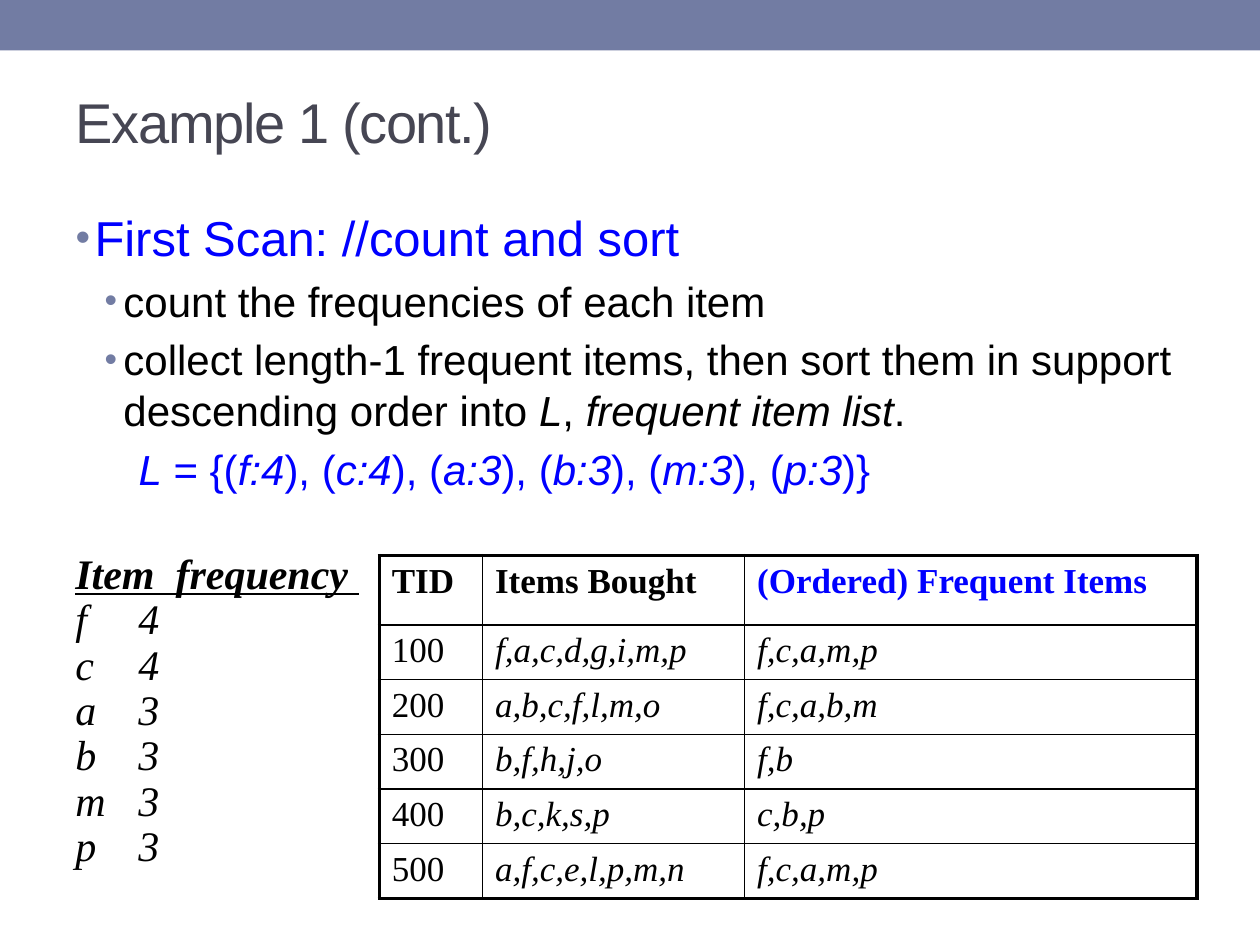
from dataclasses import dataclass

from lxml.etree import SubElement
from pptx import Presentation
from pptx.dml.color import RGBColor
from pptx.enum.shapes import MSO_SHAPE
from pptx.enum.text import MSO_ANCHOR, MSO_AUTO_SIZE, PP_ALIGN
from pptx.oxml.ns import qn
from pptx.util import Inches, Pt

HUES = {
    "bar": "727CA3",
    "title": "464653",
    "blue": "0000FF",
    "black": "000000",
}
SANS, SERIF = "Arial", "Times New Roman"


@dataclass
class Point:
    text: str
    size: int
    hue: str
    left: float
    level: int = 1
    mark: bool = True


POINTS = [
    Point("First Scan: //count and sort", 28, "blue", 0.15, level=0),
    Point("count the frequencies of each item", 24, "black", 0.38),
    Point("collect length-1 frequent items, then sort them in support "
          "descending order into *L*, *frequent item list*.", 24, "black", 0.38),
    Point("*L* = {(*f:4*), (*c:4*), (*a:3*), (*b:3*), (*m:3*), (*p:3*)}",
          24, "blue", 0.5, mark=False),
]
COUNTS = {"f": 4, "c": 4, "a": 3, "b": 3, "m": 3, "p": 3}
ROWS = [
    ("TID", "Items Bought", "(Ordered) Frequent Items"),
    ("100", "f,a,c,d,g,i,m,p", "f,c,a,m,p"),
    ("200", "a,b,c,f,l,m,o", "f,c,a,b,m"),
    ("300", "b,f,h,j,o", "f,b"),
    ("400", "b,c,k,s,p", "c,b,p"),
    ("500", "a,f,c,e,l,p,m,n", "f,c,a,m,p"),
]
WIDTHS = [0.82, 2.08, 3.59]


def color(hue: str) -> RGBColor:
    return RGBColor.from_string(HUES[hue])


def style(run, face: str, size: int, hue: str, bold=False, italic=False) -> None:
    font = run.font
    font.name, font.size = face, Pt(size)
    font.bold, font.italic = bold, italic
    font.color.rgb = color(hue)


def place(shape, left: float, top: float, width: float, height: float) -> None:
    shape.left, shape.top = Inches(left), Inches(top)
    shape.width, shape.height = Inches(width), Inches(height)


def add_bar(slide) -> None:
    bar = slide.shapes.add_shape(MSO_SHAPE.RECTANGLE, 0, 0, Inches(10), Inches(0.4))
    bar.shadow.inherit = False
    bar.fill.solid()
    bar.fill.fore_color.rgb = color("bar")
    bar.line.fill.background()


def add_title(slide) -> None:
    title = slide.shapes.title
    place(title, 0.5, 0.42, 9, 1.08)
    frame = title.text_frame
    frame.text = "Example 1 (cont.)"
    frame.vertical_anchor = MSO_ANCHOR.MIDDLE
    frame.auto_size = MSO_AUTO_SIZE.NONE
    para = frame.paragraphs[0]
    para.alignment = PP_ALIGN.LEFT
    run = para.runs[0]
    style(run, SANS, 32, "title")
    run.font._element.set("spc", "-80")


def set_mark(para, point: Point) -> None:
    props = para._p.get_or_add_pPr()
    props.set("marL", str(Inches(point.left)))
    props.set("indent", str(Inches(-0.15 if point.mark else 0)))
    if point.mark:
        tint = SubElement(props, qn("a:buClr"))
        SubElement(tint, qn("a:srgbClr"), val=HUES["bar"])
        SubElement(props, qn("a:buSzPct"), val="85000")
        SubElement(props, qn("a:buFont"), typeface=SANS)
        SubElement(props, qn("a:buChar"), char="•")
    else:
        SubElement(props, qn("a:buNone"))


def add_points(slide) -> None:
    body = slide.placeholders[1]
    place(body, 0.5, 1.6, 9, 5.48)
    frame = body.text_frame
    frame.auto_size = MSO_AUTO_SIZE.NONE
    for i, point in enumerate(POINTS):
        para = frame.add_paragraph() if i else frame.paragraphs[0]
        para.level = point.level
        para.space_before = Pt(point.size * 0.2)
        set_mark(para, point)
        for j, part in enumerate(point.text.split("*")):
            if part:
                run = para.add_run()
                run.text = part
                style(run, SANS, point.size, point.hue, italic=j % 2 == 1)


def add_counts(slide) -> None:
    box = slide.shapes.add_textbox(Inches(0.5), Inches(4.34), Inches(2.5), Inches(2.65))
    frame = box.text_frame
    frame.word_wrap = True
    lines = ["Item  frequency "] + [f"{item}\t{count}" for item, count in COUNTS.items()]
    frame.text = "\n".join(lines)
    for i, para in enumerate(frame.paragraphs):
        para.line_spacing = 0.9
        for run in para.runs:
            style(run, SERIF, 24, "black", bold=i == 0, italic=True)
            run.font.underline = i == 0


def set_edges(cell, row: int, col: int) -> None:
    outer = {
        "L": col == 0,
        "R": col == len(WIDTHS) - 1,
        "T": row == 0,
        "B": row == len(ROWS) - 1,
    }
    props = cell._tc.get_or_add_tcPr()
    for side, thick in outer.items():
        line = SubElement(props, qn(f"a:ln{side}"), w=str(Pt(2.25 if thick else 1)))
        fill = SubElement(line, qn("a:solidFill"))
        SubElement(fill, qn("a:srgbClr"), val=HUES["black"])


def add_grid(slide) -> None:
    shape = slide.shapes.add_table(len(ROWS), len(WIDTHS), Inches(3.01), Inches(4.41),
                                   Inches(sum(WIDTHS)), Inches(2.72))
    table = shape.table
    table.first_row = table.horz_banding = False
    for col, width in enumerate(WIDTHS):
        table.columns[col].width = Inches(width)
    for row, texts in enumerate(ROWS):
        table.rows[row].height = Inches(0.43 if row else 0.55)
        for col, text in enumerate(texts):
            cell = table.cell(row, col)
            set_edges(cell, row, col)
            cell.fill.background()
            cell.text = text
            hue = "blue" if row == 0 and col == 2 else "black"
            style(cell.text_frame.paragraphs[0].runs[0], SERIF, 20, hue,
                  bold=row == 0, italic=row > 0 and col > 0)


def main() -> None:
    deck = Presentation()
    deck.slide_width, deck.slide_height = Inches(10), Inches(7.5)
    slide = deck.slides.add_slide(deck.slide_layouts[1])
    add_bar(slide)
    add_title(slide)
    add_points(slide)
    add_counts(slide)
    add_grid(slide)
    deck.save("out.pptx")


if __name__ == "__main__":
    main()
